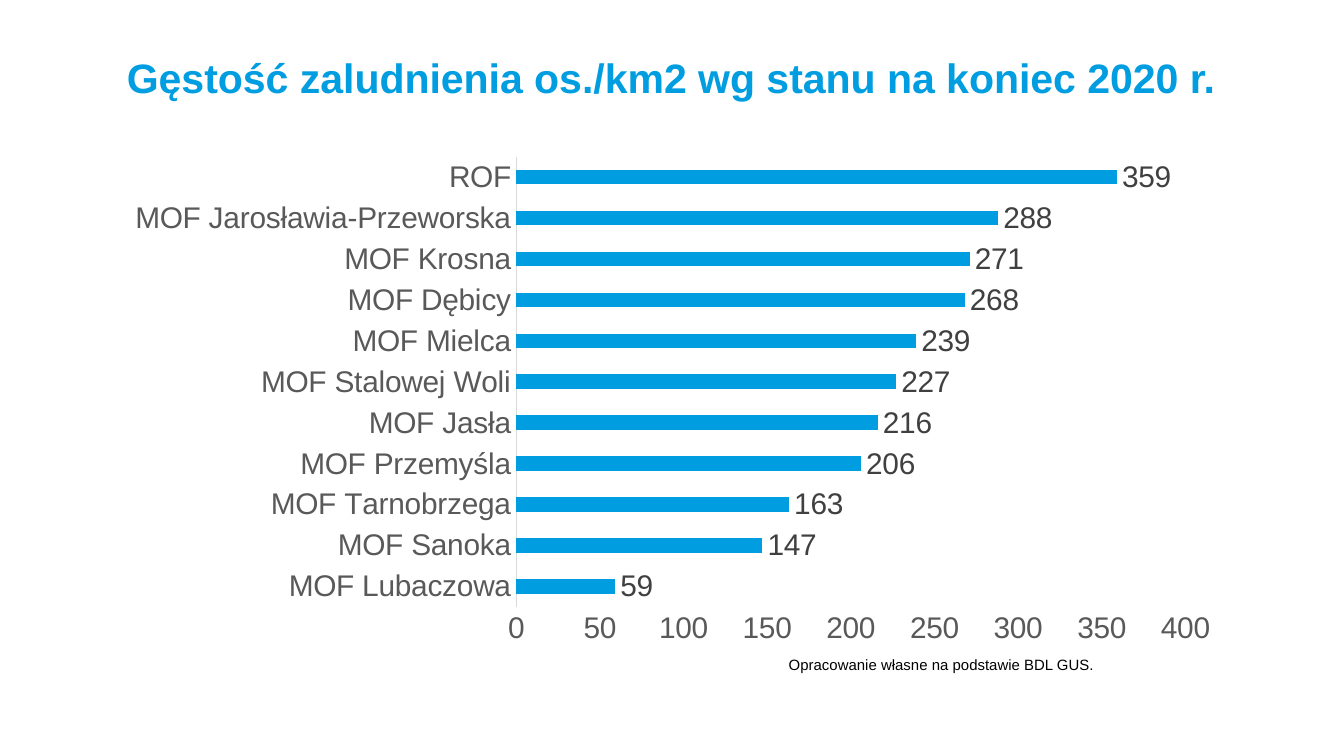
from pptx import Presentation
from pptx.chart.data import CategoryChartData
from pptx.dml.color import RGBColor
from pptx.enum.chart import XL_CHART_TYPE, XL_LABEL_POSITION, XL_TICK_MARK
from pptx.enum.text import MSO_ANCHOR, PP_ALIGN
from pptx.util import Inches, Pt

BAR = XL_CHART_TYPE.BAR_CLUSTERED
OUTSIDE_END = XL_LABEL_POSITION.OUTSIDE_END
NO_TICK = XL_TICK_MARK.NONE
TOP = MSO_ANCHOR.TOP
CENTER = PP_ALIGN.CENTER

BLUE = "009DE0"
DENSITY = {
    "MOF Lubaczowa": 59,
    "MOF Sanoka": 147,
    "MOF Tarnobrzega": 163,
    "MOF Przemyśla": 206,
    "MOF Jasła": 216,
    "MOF Stalowej Woli": 227,
    "MOF Mielca": 239,
    "MOF Dębicy": 268,
    "MOF Krosna": 271,
    "MOF Jarosławia-Przeworska": 288,
    "ROF": 359,
}


def rgb(color):
    """Return the colour for a hex string."""
    return RGBColor.from_string(color)


def style(font, size, color, bold=False):
    """Format a font in Arial."""
    font.name = "Arial"
    font.size = Pt(size)
    font.bold = bold
    font.color.rgb = rgb(color)


def add_title(s, x, y, w, h):
    """Place the slide title in its placeholder."""
    sp = s.shapes.title
    sp.left, sp.top, sp.width, sp.height = (Inches(v) for v in (x, y, w, h))
    tf = sp.text_frame
    tf.margin_left = tf.margin_right = tf.margin_top = tf.margin_bottom = 0
    tf.vertical_anchor = TOP
    tf.text = "Gęstość zaludnienia os./km2 wg stanu na koniec 2020 r."
    p = tf.paragraphs[0]
    p.alignment = CENTER
    style(p.runs[0].font, 22, BLUE, bold=True)


def add_density_chart(s, x, y, w, h):
    """Draw the population density of each area as bars."""
    data = CategoryChartData(number_format="#,##0")
    data.categories = list(DENSITY)
    data.add_series("Series 1", list(DENSITY.values()))
    chart = s.shapes.add_chart(
        BAR, Inches(x), Inches(y), Inches(w), Inches(h), data
    ).chart
    chart.has_legend = False
    chart.has_title = False
    style(chart.font, 16, "000000")

    for axis in (chart.category_axis, chart.value_axis):
        axis.major_tick_mark = axis.minor_tick_mark = NO_TICK
        axis.has_major_gridlines = False
        style(axis.tick_labels.font, 16, "595959")
    line = chart.category_axis.format.line
    line.color.rgb = rgb("D9D9D9")
    line.width = Pt(0.75)
    chart.value_axis.format.line.fill.background()

    plot = chart.plots[0]
    plot.gap_width = 182
    plot.vary_by_categories = False
    series = plot.series[0]
    series.format.fill.solid()
    series.format.fill.fore_color.rgb = rgb(BLUE)
    labels = series.data_labels
    labels.show_value = True
    labels.position = OUTSIDE_END
    labels.number_format = "#,##0"
    labels.number_format_is_linked = False
    style(labels.font, 16, "404040")


def add_credit(s, x, y, w, h):
    """Place the data credit below the chart."""
    sp = s.shapes.add_textbox(Inches(x), Inches(y), Inches(w), Inches(h))
    tf = sp.text_frame
    tf.word_wrap = True
    tf.text = "Opracowanie własne na podstawie BDL GUS."
    style(tf.paragraphs[0].runs[0].font, 8, "000000")


def main():
    """Build the slide and save it."""
    prs = Presentation()
    prs.slide_width = Inches(10)
    prs.slide_height = Inches(10 * 9 / 16)
    s = prs.slides.add_slide(prs.slide_layouts[5])
    add_title(s, 0.83, 0.39, 8.33, 0.89)
    add_density_chart(s, 0.84, 1.09, 8.33, 3.78)
    add_credit(s, 5.77, 4.83, 3.54, 0.24)
    prs.save("out.pptx")


if __name__ == "__main__":
    main()
